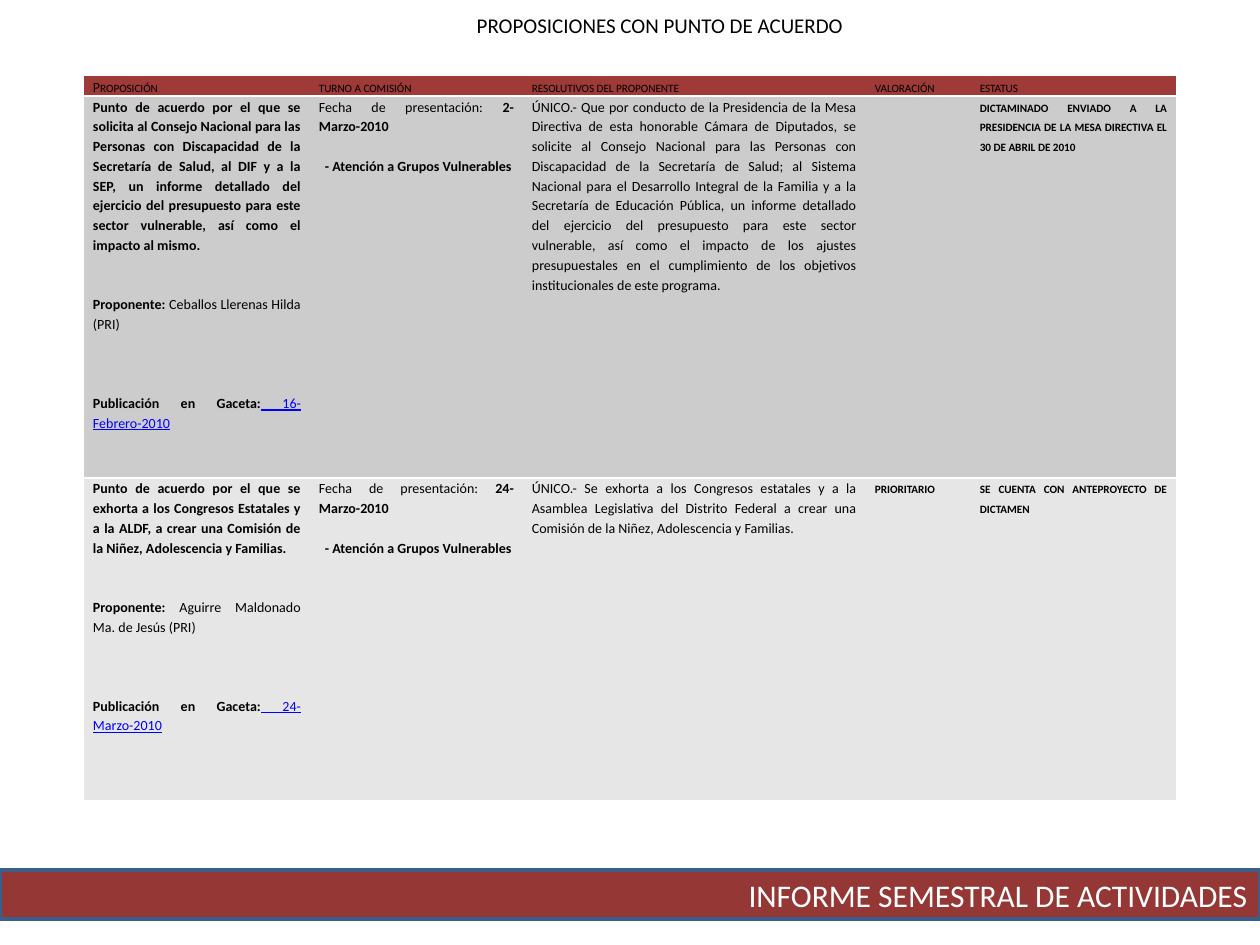
from lxml import etree
from pptx import Presentation
from pptx.dml.color import RGBColor
from pptx.enum.shapes import MSO_SHAPE
from pptx.enum.text import MSO_ANCHOR, MSO_AUTO_SIZE, PP_ALIGN
from pptx.oxml.ns import qn
from pptx.util import Emu, Pt

RECT = MSO_SHAPE.RECTANGLE
TOP, MIDDLE = MSO_ANCHOR.TOP, MSO_ANCHOR.MIDDLE
NO_FIT = MSO_AUTO_SIZE.NONE
CENTER, RIGHT, JUSTIFY = PP_ALIGN.CENTER, PP_ALIGN.RIGHT, PP_ALIGN.JUSTIFY

COLORS = {"bar": "953735", "edge": "3A5F8C", "head": "9E3A38", "dark": "CCCCCC",
          "light": "E6E6E6", "white": "FFFFFF", "black": "000000", "link": "0000FF"}
PLAIN_GRID = "{2D5ABB26-0587-4C30-8999-92F81FD0307C}"
LINE = 11.25  # height of one table text line, in points

STYLES = {
    "plain": {"bold": False},
    "bold": {"bold": True},
    "link": {"bold": False, "underline": True},
}

COLS = [226, 213, 343, 105, 205]
ROWS = [20, 382, 322]
HEADS = ["Proposición", "turno a comisión", "resolutivos del proponente",
         "valoración", "estatus"]
ITEMS = [
    {"point": "Punto de acuerdo por el que se solicita al Consejo Nacional para las "
              "Personas con Discapacidad de la Secretaría de Salud, al DIF y a la SEP, un "
              "informe detallado del ejercicio del presupuesto para este sector "
              "vulnerable, así como el impacto al mismo.",
     "author": "Ceballos Llerenas Hilda (PRI)",
     "issue": "16-Febrero-2010",
     "date": "2-Marzo-2010",
     "terms": "ÚNICO.- Que por conducto de la Presidencia de la Mesa Directiva de esta "
              "honorable Cámara de Diputados, se solicite al Consejo Nacional para las "
              "Personas con Discapacidad de la Secretaría de Salud; al Sistema Nacional "
              "para el Desarrollo Integral de la Familia y a la Secretaría de Educación "
              "Pública, un informe detallado del ejercicio del presupuesto para este "
              "sector vulnerable, así como el impacto de los ajustes presupuestales en "
              "el cumplimiento de los objetivos institucionales de este programa.",
     "rank": "",
     "status": "dictaminado enviado a la presidencia de la mesa directiva el 30 de abril "
               "de 2010"},
    {"point": "Punto de acuerdo por el que se exhorta a los Congresos Estatales y a la "
              "ALDF, a crear una Comisión de la Niñez, Adolescencia y Familias.",
     "author": "Aguirre Maldonado Ma. de Jesús (PRI)",
     "issue": "24-Marzo-2010",
     "date": "24-Marzo-2010",
     "terms": "ÚNICO.- Se exhorta a los Congresos estatales y a la Asamblea Legislativa "
              "del Distrito Federal a crear una Comisión de la Niñez, Adolescencia y "
              "Familias.",
     "rank": "prioritario",
     "status": "se cuenta con anteproyecto de dictamen"},
]


def px(count):
    return Emu(round(count * 914400 / 126))


def rgb(name):
    return RGBColor.from_string(COLORS[name])


def put(target, values):
    for name, value in values.items():
        setattr(target, name, value)


def write(par, text, size, color="black", style="plain", small=False):
    run = par.add_run()
    run.text = text
    put(run.font, {"name": "Calibri", "size": Pt(size), **STYLES[style]})
    run.font.color.rgb = rgb(color)
    if small:
        run.font._element.set("cap", "small")


def add_title(slide, box):
    left, top, width, height = map(px, box)
    title = slide.shapes.title
    put(title, {"left": left, "top": top, "width": width, "height": height})
    put(title.text_frame, {"word_wrap": True, "auto_size": NO_FIT,
                           "vertical_anchor": TOP})
    par = title.text_frame.paragraphs[0]
    par.alignment = CENTER
    write(par, "PROPOSICIONES CON PUNTO DE ACUERDO", 12)


def add_footer(slide, box):
    bar = slide.shapes.add_shape(RECT, *map(px, box))
    bar.shadow.inherit = False
    bar.fill.solid()
    bar.fill.fore_color.rgb = rgb("bar")
    bar.line.color.rgb = rgb("edge")
    bar.line.width = Pt(2)
    bar.text_frame.vertical_anchor = MIDDLE
    par = bar.text_frame.paragraphs[0]
    par.alignment = RIGHT
    write(par, "INFORME SEMESTRAL DE ACTIVIDADES", 18, "white")


def add_edge(cell, side):
    """Draw a white border on one side of the cell: lnT or lnB."""
    edge = etree.Element(qn("a:" + side), w=str(Pt(1.5)))
    fill = etree.SubElement(edge, qn("a:solidFill"))
    etree.SubElement(fill, qn("a:srgbClr"), val=COLORS["white"])
    cell._tc.get_or_add_tcPr().insert(0, edge)


def fill_cell(cell, color, pars, small=False):
    """Each paragraph is (blank lines before, left indent in px, runs)."""
    put(cell, {"margin_left": px(9), "margin_right": px(9),
               "margin_top": 0, "margin_bottom": 0})
    cell.fill.solid()
    cell.fill.fore_color.rgb = rgb(color)
    frame = cell.text_frame
    for index, (gap, indent, runs) in enumerate(pars):
        par = frame.add_paragraph() if index else frame.paragraphs[0]
        put(par, {"alignment": JUSTIFY, "line_spacing": 1.15})
        if gap:
            par.space_before = Pt(gap * LINE)
        if indent:
            par._p.get_or_add_pPr().set("marL", str(px(indent)))
        for text, style in runs:
            write(par, text, 8, "link" if style == "link" else "black", style, small)


def single(text, style):
    return [(0, 0, [(text, style)])] if text else []


def item_cells(item):
    """Give the paragraphs and the small caps flag of each cell in a row."""
    point = [
        (0, 0, [(item["point"], "bold")]),
        (2, 0, [("Proponente: ", "bold"), (item["author"], "plain")]),
        (3, 0, [("Publicación en Gaceta:", "bold"), (" " + item["issue"], "link")]),
    ]
    turn = [
        (0, 0, [("Fecha de presentación:", "plain"), (" " + item["date"], "bold")]),
        (1, 6, [("- Atención a Grupos Vulnerables", "bold")]),
    ]
    return [(point, False), (turn, False), (single(item["terms"], "plain"), False),
            (single(item["rank"], "bold"), True), (single(item["status"], "bold"), True)]


def add_grid(slide, left, top):
    frame = slide.shapes.add_table(len(ROWS), len(COLS), px(left), px(top),
                                   px(sum(COLS)), px(sum(ROWS)))
    table = frame.table
    put(table, {"first_row": False, "horz_banding": False})
    table._tbl.tblPr.find(qn("a:tableStyleId")).text = PLAIN_GRID
    for col, width in zip(table.columns, COLS):
        col.width = px(width)
    for row, height in zip(table.rows, ROWS):
        row.height = px(height)

    cells = [[(single(head, "plain"), True) for head in HEADS]]
    cells += [item_cells(item) for item in ITEMS]
    for r, (color, line) in enumerate(zip(("head", "dark", "light"), cells)):
        for c, (pars, small) in enumerate(line):
            fill_cell(table.cell(r, c), color, pars, small)
    for c in range(len(COLS)):
        add_edge(table.cell(0, c), "lnB")
        add_edge(table.cell(1, c), "lnT")


def main():
    deck = Presentation()
    put(deck, {"slide_width": px(1260), "slide_height": px(945)})
    slide = deck.slides.add_slide(deck.slide_layouts[5])
    add_footer(slide, (0, 870, 1260, 49))
    add_title(slide, (134, 6, 1052, 38))
    add_grid(slide, 84, 76)
    deck.save("out.pptx")


if __name__ == "__main__":
    main()
